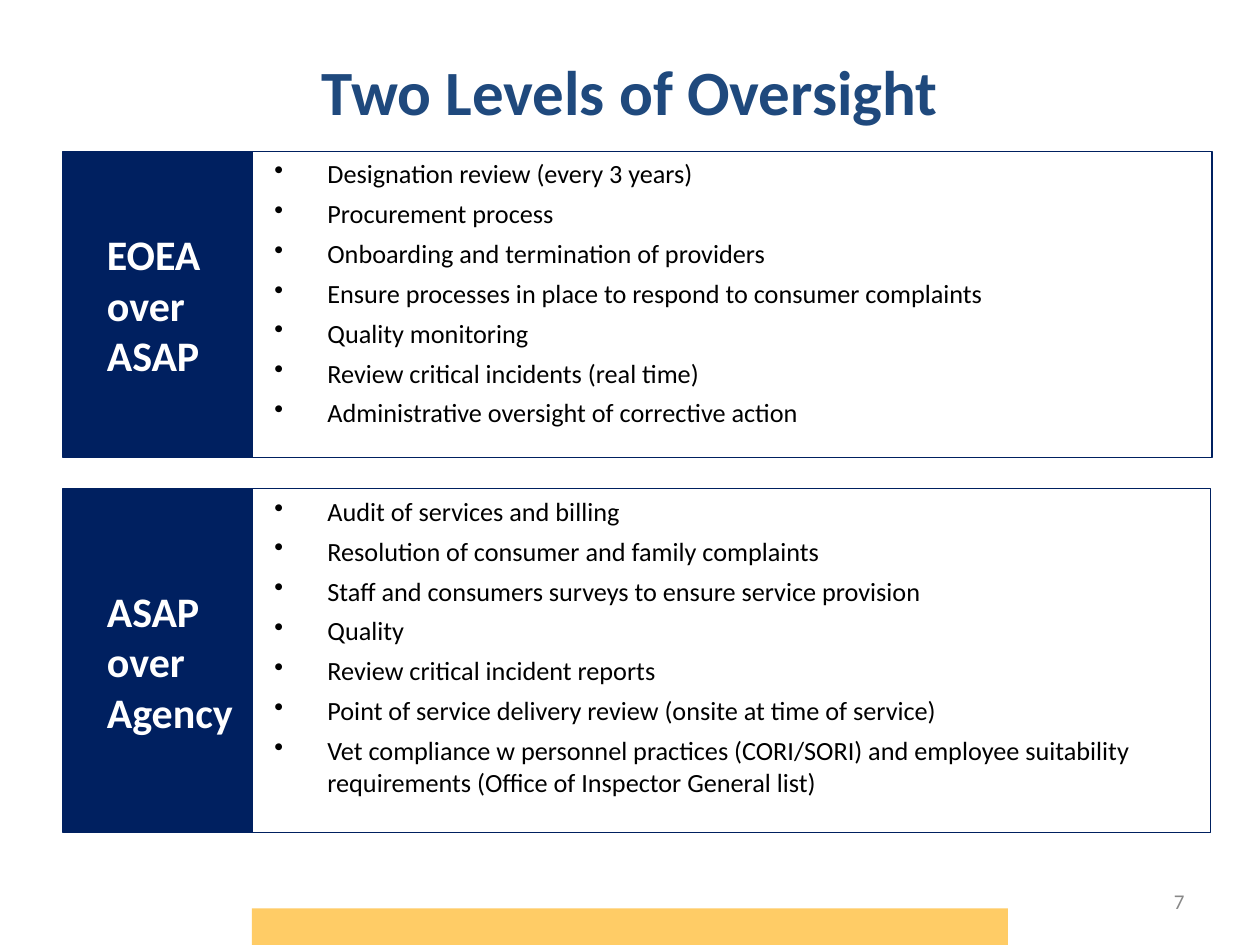
"""Build the slide on the two levels of oversight."""
from dataclasses import dataclass

import lxml.etree
import pptx
import pptx.dml.color
import pptx.enum.shapes
import pptx.enum.text
import pptx.oxml.ns
import pptx.util

COLORS = {
    "navy": "002060",
    "title": "1F497D",
    "gold": "FFCC66",
    "white": "FFFFFF",
    "black": "000000",
    "gray": "888888",
}
FONT = "Calibri"
COLUMNS, ROWS = 20, 15
SLIDE_WIDTH, SLIDE_HEIGHT = pptx.util.Inches(10), pptx.util.Inches(7.5)
ALIGN = pptx.enum.text.PP_ALIGN
ANCHOR = pptx.enum.text.MSO_ANCHOR


@dataclass(frozen=True)
class Area:
    """A rectangle in grid columns and rows."""
    column: float
    row: float
    columns: float
    rows: float

    def box(self) -> tuple[int, int, int, int]:
        """Return left, top, width and height as lengths."""
        return (
            round(SLIDE_WIDTH * self.column / COLUMNS),
            round(SLIDE_HEIGHT * self.row / ROWS),
            round(SLIDE_WIDTH * self.columns / COLUMNS),
            round(SLIDE_HEIGHT * self.rows / ROWS),
        )


@dataclass(frozen=True)
class Level:
    """One level of oversight and its duties."""
    label: str
    row: float
    rows: float
    duty_columns: float
    duties: tuple[str, ...]


LEVELS = (
    Level("EOEA over ASAP", 2.4, 4.86, 15.24, (
        "Designation review (every 3 years)",
        "Procurement process",
        "Onboarding and termination of providers",
        "Ensure processes in place to respond to consumer complaints",
        "Quality monitoring",
        "Review critical incidents (real time)",
        "Administrative oversight of corrective action",
    )),
    Level("ASAP over Agency", 7.76, 5.46, 15.22, (
        "Audit of services and billing",
        "Resolution of consumer and family complaints",
        "Staff and consumers surveys to ensure service provision",
        "Quality",
        "Review critical incident reports",
        "Point of service delivery review (onsite at time of service)",
        "Vet compliance w personnel practices (CORI/SORI) and employee "
        "suitability requirements (Office of Inspector General list)",
    )),
)


def rgb(name: str) -> pptx.dml.color.RGBColor:
    """Look up a named colour."""
    return pptx.dml.color.RGBColor.from_string(COLORS[name])


def style(paragraph, size: float, color: str, bold: bool = False,
          align=ALIGN.LEFT) -> None:
    """Set a paragraph's font and alignment."""
    paragraph.alignment = align
    paragraph.font.name = FONT
    paragraph.font.size = pptx.util.Pt(size)
    paragraph.font.bold = bold
    paragraph.font.color.rgb = rgb(color)


def indent(paragraph, margin: float, first: float = 0, bullet: str = "") -> None:
    """Indent a paragraph in inches, with an optional bullet."""
    paragraph.space_before = pptx.util.Pt(4.8)
    properties = paragraph._p.get_or_add_pPr()
    properties.set("marL", str(pptx.util.Inches(margin)))
    properties.set("indent", str(pptx.util.Inches(first)))
    if bullet:
        lxml.etree.SubElement(
            properties, pptx.oxml.ns.qn("a:buChar"), char=bullet)


def add_panel(slide, area: Area, fill: str = "", line: str = ""):
    """Draw a rectangle with optional fill and outline."""
    panel = slide.shapes.add_shape(
        pptx.enum.shapes.MSO_SHAPE.RECTANGLE, *area.box())
    panel.shadow.inherit = False
    if fill:
        panel.fill.solid()
        panel.fill.fore_color.rgb = rgb(fill)
    else:
        panel.fill.background()
    if line:
        panel.line.color.rgb = rgb(line)
        panel.line.width = pptx.util.Pt(0.75)
    else:
        panel.line.fill.background()
    return panel


def add_level(slide, level: Level) -> None:
    """Draw a level's label beside its list of duties."""
    label = add_panel(
        slide, Area(1, level.row, 3, level.rows), "navy", "navy").text_frame
    label.text = level.label
    label.vertical_anchor = ANCHOR.MIDDLE
    indent(label.paragraphs[0], 0.25)
    style(label.paragraphs[0], 24, "white", bold=True)

    duties = add_panel(
        slide, Area(4, level.row, level.duty_columns, level.rows),
        line="navy").text_frame
    duties.text = "\n".join(level.duties)
    duties.vertical_anchor = ANCHOR.TOP
    for duty in duties.paragraphs:
        indent(duty, 0.5, -0.42, "•")
        style(duty, 15, "black")


def set_title(slide, text: str) -> None:
    """Place and format the title placeholder."""
    title = slide.shapes.title
    title.left, title.top, title.width, title.height = Area(0, 0.32, 20, 2.22).box()
    title.text_frame.text = text
    title.text_frame.vertical_anchor = ANCHOR.MIDDLE
    style(title.text_frame.paragraphs[0], 36, "title", True, ALIGN.CENTER)


def add_page_number(slide, number: int) -> None:
    """Write the page number at the lower right."""
    page = slide.shapes.add_textbox(*Area(14.34, 13.9, 4.66, 0.8).box()).text_frame
    page.word_wrap = True
    page.vertical_anchor = ANCHOR.MIDDLE
    page.text = str(number)
    style(page.paragraphs[0], 12, "gray", align=ALIGN.RIGHT)


def main() -> None:
    """Build and save the slide."""
    deck = pptx.Presentation()
    deck.slide_width, deck.slide_height = SLIDE_WIDTH, SLIDE_HEIGHT
    slide = deck.slides.add_slide(deck.slide_layouts.get_by_name("Title Only"))
    set_title(slide, "Two Levels of Oversight")
    for level in LEVELS:
        add_level(slide, level)
    add_page_number(slide, 7)
    add_panel(slide, Area(4, 14.42, 12, 0.58), "gold")
    deck.save("out.pptx")


if __name__ == "__main__":
    main()
